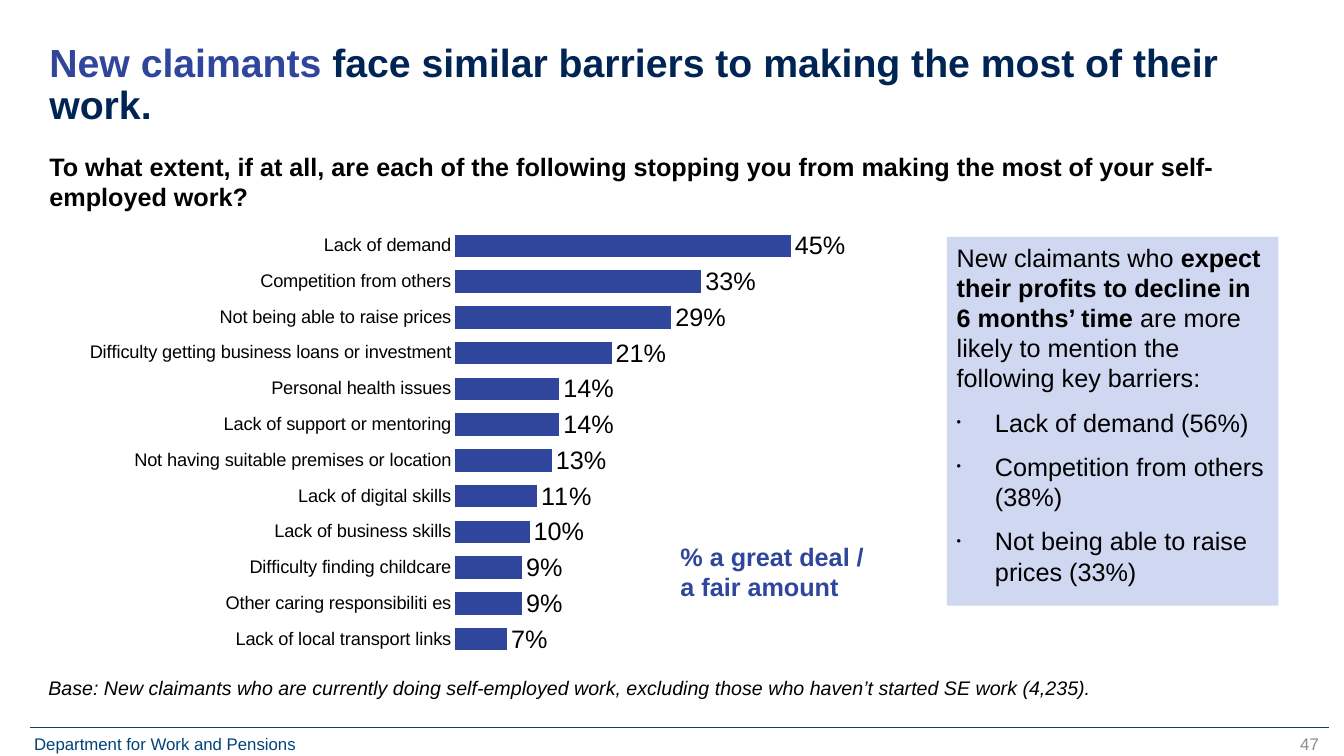
import pptx
import pptx.chart.data
import pptx.dml.color
import pptx.enum.chart
import pptx.enum.shapes
import pptx.enum.text
import pptx.oxml.ns
import pptx.util
from dataclasses import dataclass
from lxml import etree

Inches = pptx.util.Inches
Pt = pptx.util.Pt
Align = pptx.enum.text.PP_ALIGN
qn = pptx.oxml.ns.qn


@dataclass(frozen=True)
class Theme:
    font: str = "Arial"
    blue: str = "2F469C"
    navy: str = "002554"
    rule: str = "00437B"
    grey: str = "8C8C8C"
    black: str = "000000"
    panel: str = "D0D7F1"
    title: int = 28
    body: int = 18
    note: int = 14
    label: int = 13
    foot: int = 12


THEME = Theme()

BARS = [
    ("Lack of demand", 0.45),
    ("Competition from others", 0.33),
    ("Not being able to raise prices", 0.29),
    ("Difficulty getting business loans or investment", 0.21),
    ("Personal health issues", 0.14),
    ("Lack of support or mentoring", 0.14),
    ("Not having suitable premises or location", 0.13),
    ("Lack of digital skills", 0.11),
    ("Lack of business skills", 0.10),
    ("Difficulty finding childcare", 0.09),
    ("Other caring responsibiliti es", 0.09),
    ("Lack of local transport links", 0.07),
]

POINTS = [
    "Lack of demand (56%)",
    "Competition from others (38%)",
    "Not being able to raise prices (33%)",
]


def paint(name):
    return pptx.dml.color.RGBColor.from_string(name)


def style(font, size, color, bold=False, italic=False):
    font.name = THEME.font
    font.size = Pt(size)
    font.color.rgb = paint(color)
    font.bold = bold
    font.italic = italic


def add_run(para, text, size, color, bold=False, italic=False):
    run = para.add_run()
    run.text = text
    style(run.font, size, color, bold, italic)


def set_frame(frame, inset=True):
    frame.word_wrap = True
    frame.auto_size = pptx.enum.text.MSO_AUTO_SIZE.NONE
    frame.vertical_anchor = pptx.enum.text.MSO_ANCHOR.TOP
    side, edge = (0.1, 0.05) if inset else (0, 0)
    frame.margin_left = frame.margin_right = Inches(side)
    frame.margin_top = frame.margin_bottom = Inches(edge)


def set_para(para, gap=5, align=Align.LEFT):
    para.alignment = align
    para.space_before = para.space_after = Pt(gap)


def add_bullet(para):
    props = para._p.get_or_add_pPr()
    props.set("marL", str(Inches(0.38)))
    props.set("indent", str(-Inches(0.38)))
    etree.SubElement(props, qn("a:buSzPct"), val="50000")
    etree.SubElement(props, qn("a:buFont"), typeface=THEME.font)
    etree.SubElement(props, qn("a:buChar"), char="•")


def add_title(slide, parts):
    title = slide.shapes.title
    title.left, title.top = Inches(0.49), Inches(0.43)
    title.width, title.height = Inches(12.34), Inches(0.85)
    set_frame(title.text_frame, False)
    para = title.text_frame.paragraphs[0]
    set_para(para, 0)
    para.line_spacing = 0.9
    for text, color in parts:
        add_run(para, text, THEME.title, color, True)


def add_label(slide, place, text, size, color, bold=False, italic=False,
              inset=True, gap=5, align=Align.LEFT):
    box = slide.shapes.add_textbox(*map(Inches, place))
    set_frame(box.text_frame, inset)
    para = box.text_frame.paragraphs[0]
    set_para(para, gap, align)
    add_run(para, text, size, color, bold, italic)


def add_rule(slide, left, right, top):
    line = slide.shapes.add_connector(
        pptx.enum.shapes.MSO_CONNECTOR.STRAIGHT,
        Inches(left), Inches(top), Inches(right), Inches(top))
    line.line.color.rgb = paint(THEME.rule)
    line.line.width = Pt(0.5)
    etree.SubElement(line._element.spPr, qn("a:effectLst"))


def add_panel(slide, place, lead, points):
    panel = slide.shapes.add_shape(
        pptx.enum.shapes.MSO_SHAPE.RECTANGLE, *map(Inches, place))
    panel.shadow.inherit = False
    panel.fill.solid()
    panel.fill.fore_color.rgb = paint(THEME.panel)
    panel.line.fill.background()
    frame = panel.text_frame
    set_frame(frame)
    para = frame.paragraphs[0]
    set_para(para)
    for text, bold in lead:
        add_run(para, text, THEME.body, THEME.black, bold)
    for text in points:
        para = frame.add_paragraph()
        set_para(para)
        add_bullet(para)
        add_run(para, text, THEME.body, THEME.black)


def set_plot(chart, left, top, width, height):
    area = chart.element.find(".//" + qn("c:plotArea"))
    for old in area.findall(qn("c:layout")):
        area.remove(old)
    layout = etree.Element(qn("c:layout"))
    area.insert(0, layout)
    manual = etree.SubElement(layout, qn("c:manualLayout"))
    items = [("layoutTarget", "inner"), ("xMode", "edge"), ("yMode", "edge"),
             ("x", left), ("y", top), ("w", width), ("h", height)]
    for name, value in items:
        etree.SubElement(manual, qn("c:" + name), val=str(value))


def add_bars(slide, place, bars):
    kinds = pptx.enum.chart
    data = pptx.chart.data.CategoryChartData(number_format="0%")
    names, values = zip(*reversed(bars))
    data.categories = names
    data.add_series("Series 1", values)
    chart = slide.shapes.add_chart(
        kinds.XL_CHART_TYPE.BAR_CLUSTERED, *map(Inches, place), data).chart
    style(chart.font, THEME.label, THEME.black)
    chart.has_legend = False
    chart.has_title = False
    set_plot(chart, 0.49, 0.01, 0.45, 0.99)

    cats = chart.category_axis
    cats.major_tick_mark = kinds.XL_TICK_MARK.NONE
    cats.format.line.fill.background()
    style(cats.tick_labels.font, THEME.label, THEME.black)
    scale = chart.value_axis
    scale.minimum_scale, scale.maximum_scale = 0, 0.5
    scale.has_major_gridlines = False
    scale.visible = False

    plot = chart.plots[0]
    plot.gap_width = 59
    plot.vary_by_categories = False
    fill = plot.series[0].format.fill
    fill.solid()
    fill.fore_color.rgb = paint(THEME.blue)
    plot.has_data_labels = True
    labels = plot.data_labels
    labels.show_value = True
    labels.number_format = "0%"
    labels.number_format_is_linked = False
    labels.position = kinds.XL_LABEL_POSITION.OUTSIDE_END
    style(labels.font, THEME.body, THEME.black)


def main():
    deck = pptx.Presentation()
    deck.slide_width, deck.slide_height = Inches(13.33), Inches(7.5)
    slide = deck.slides.add_slide(deck.slide_layouts[5])

    add_rule(slide, 0.3, 13.18, 7.22)
    add_label(slide, (0.24, 7.23, 3.23, 0.3), "Department for Work and Pensions",
              THEME.foot, THEME.rule, gap=0)
    add_label(slide, (10.18, 7.23, 3, 0.4), "47",
              THEME.foot, THEME.grey, gap=0, align=Align.RIGHT)
    add_title(slide, [
        ("New claimants ", THEME.blue),
        ("face similar barriers to making the most of their work.", THEME.navy),
    ])
    add_label(slide, (0.48, 6.71, 12.36, 0.31),
              "Base: New claimants who are currently doing self-employed work, "
              "excluding those who haven’t started SE work (4,235).",
              THEME.note, THEME.black, italic=True, inset=False)
    add_bars(slide, (0.48, 2.22, 8.23, 4.3), BARS)
    add_label(slide, (0.49, 1.5, 12.36, 0.48),
              "To what extent, if at all, are each of the following stopping "
              "you from making the most of your self-employed work?",
              THEME.body, THEME.black, bold=True, inset=False)
    add_label(slide, (6.65, 5.32, 2.06, 0.48), "% a great deal / a fair amount",
              THEME.body, THEME.blue, bold=True)
    add_panel(slide, (9.39, 2.35, 3.29, 3.66), [
        ("New claimants who ", False),
        ("expect their profits to decline in 6 months’ time", True),
        (" are more likely to mention the following key barriers:", False),
    ], POINTS)
    deck.save("out.pptx")


if __name__ == "__main__":
    main()
